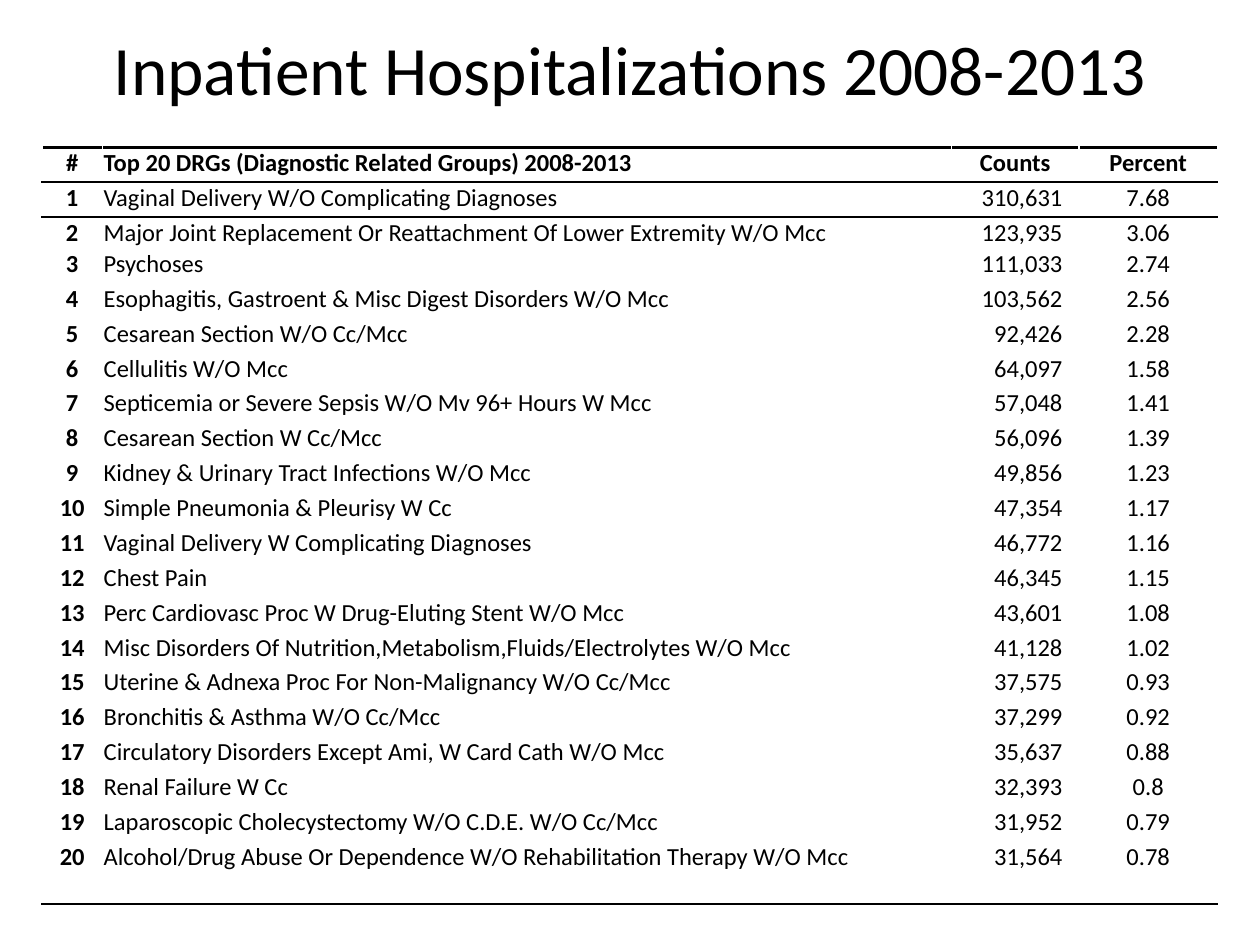
from lxml.etree import SubElement as Sub
from pptx import Presentation
from pptx.dml.color import RGBColor
from pptx.enum.text import MSO_ANCHOR as Anchor, PP_ALIGN as Align
from pptx.oxml.ns import qn
from pptx.util import Inches, Pt

WIDE, HIGH = Inches(10), Inches(7.5)
COL, ROW = WIDE / 100, HIGH / 75
FONT, BLACK, WHITE = "Calibri", "000000", "FFFFFF"
SPANS = [4.8, 67.4, 10.1, 11]
SHORT, LAST = 2.4, 5
ALIGNS = [Align.CENTER, Align.LEFT, Align.RIGHT, Align.CENTER]
HEADS = ["#", "Top 20 DRGs (Diagnostic Related Groups) 2008-2013", "Counts", "Percent"]
GROUPS = [
    ("Vaginal Delivery W/O Complicating Diagnoses", 310631, 7.68),
    ("Major Joint Replacement Or Reattachment Of Lower Extremity W/O Mcc", 123935, 3.06),
    ("Psychoses", 111033, 2.74),
    ("Esophagitis, Gastroent & Misc Digest Disorders W/O Mcc", 103562, 2.56),
    ("Cesarean Section W/O Cc/Mcc", 92426, 2.28),
    ("Cellulitis W/O Mcc", 64097, 1.58),
    ("Septicemia or Severe Sepsis W/O Mv 96+ Hours W Mcc", 57048, 1.41),
    ("Cesarean Section W Cc/Mcc", 56096, 1.39),
    ("Kidney & Urinary Tract Infections W/O Mcc", 49856, 1.23),
    ("Simple Pneumonia & Pleurisy W Cc", 47354, 1.17),
    ("Vaginal Delivery W Complicating Diagnoses", 46772, 1.16),
    ("Chest Pain", 46345, 1.15),
    ("Perc Cardiovasc Proc W Drug-Eluting Stent W/O Mcc", 43601, 1.08),
    ("Misc Disorders Of Nutrition,Metabolism,Fluids/Electrolytes W/O Mcc", 41128, 1.02),
    ("Uterine & Adnexa Proc For Non-Malignancy W/O Cc/Mcc", 37575, 0.93),
    ("Bronchitis & Asthma W/O Cc/Mcc", 37299, 0.92),
    ("Circulatory Disorders Except Ami, W Card Cath W/O Mcc", 35637, 0.88),
    ("Renal Failure W Cc", 32393, 0.8),
    ("Laparoscopic Cholecystectomy W/O C.D.E. W/O Cc/Mcc", 31952, 0.79),
    ("Alcohol/Drug Abuse Or Dependence W/O Rehabilitation Therapy W/O Mcc", 31564, 0.78),
]


def place(box):
    left, top, width, height = box
    return int(left * COL), int(top * ROW), int(width * COL), int(height * ROW)


def style(para, size, align, bold=False):
    para.alignment = align
    font = para.font
    font.name, font.size, font.bold = FONT, Pt(size), bold
    font.color.rgb = RGBColor.from_string(BLACK)


def border(cell, side, color, width):
    line = Sub(cell._tc.get_or_add_tcPr(), qn(f"a:ln{side}"), w=str(Pt(width)))
    Sub(Sub(line, qn("a:solidFill")), qn("a:srgbClr"), val=color)


def frame(cell, ruled):
    for side in "LRTB":
        color, width = (BLACK, 1.5) if side in ruled else (WHITE, 1)
        border(cell, side, color, width)
    cell.fill.background()


def title(slide, box):
    text = slide.shapes.add_textbox(*place(box)).text_frame
    text.word_wrap = True
    text.vertical_anchor = Anchor.MIDDLE
    text.text = "Inpatient Hospitalizations 2008-2013"
    style(text.paragraphs[0], 39.6, Align.CENTER)


def ranking(slide, box):
    lines = [HEADS] + [
        [str(rank), name, f"{count:,}", str(share)]
        for rank, (name, count, share) in enumerate(GROUPS, 1)
    ]
    end = len(lines) - 1
    table = slide.shapes.add_table(len(lines), len(HEADS), *place(box)).table
    table.first_row = table.horz_banding = False
    for col, span in zip(table.columns, SPANS):
        col.width = int(span * COL)
    pitch = (box[3] - SHORT - LAST) / (len(lines) - 2)
    tall = {2: SHORT, end: LAST}
    rules = {0: "TB", 1: "TB", 2: "T", end: "B"}
    for r, line in enumerate(lines):
        table.rows[r].height = int(tall.get(r, pitch) * ROW)
        for c, text in enumerate(line):
            cell = table.cell(r, c)
            cell.margin_left = cell.margin_right = cell.margin_top = Inches(0.01)
            cell.margin_bottom = 0
            align = ALIGNS[c] if r else ALIGNS[c] if c != 2 else Align.CENTER
            if align == Align.RIGHT:
                cell.margin_right = Inches(0.13)
            cell.text = text
            style(cell.text_frame.paragraphs[0], 14, align, r == 0 or c == 0)
            frame(cell, rules.get(r, ""))


def main():
    deck = Presentation()
    deck.slide_width, deck.slide_height = WIDE, HIGH
    slide = deck.slides.add_slide(deck.slide_layouts[6])
    title(slide, (5, 0.8, 90, 9.2))
    ranking(slide, (3.33, 11.7, 93.3, 60))
    deck.save("out.pptx")


if __name__ == "__main__":
    main()
